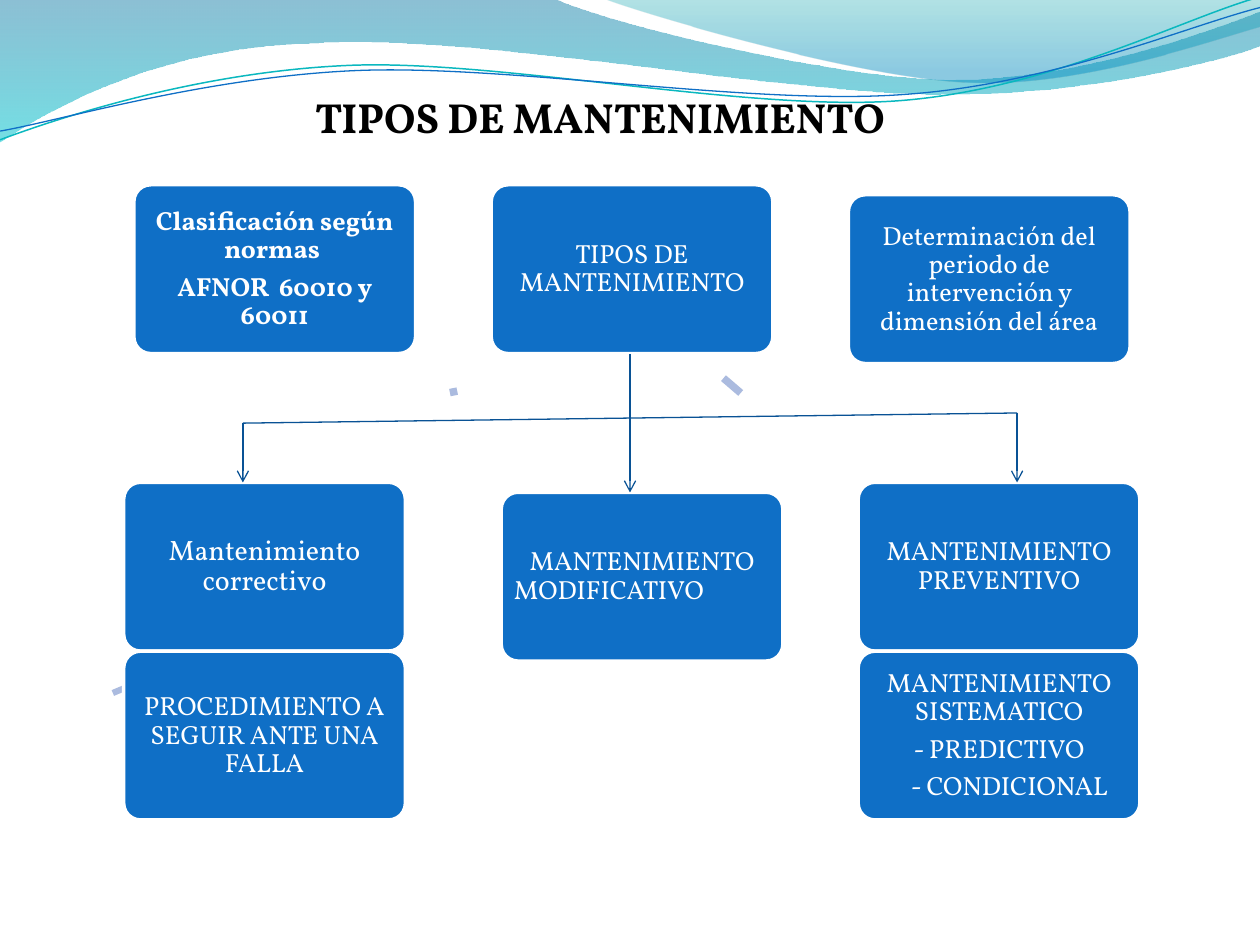
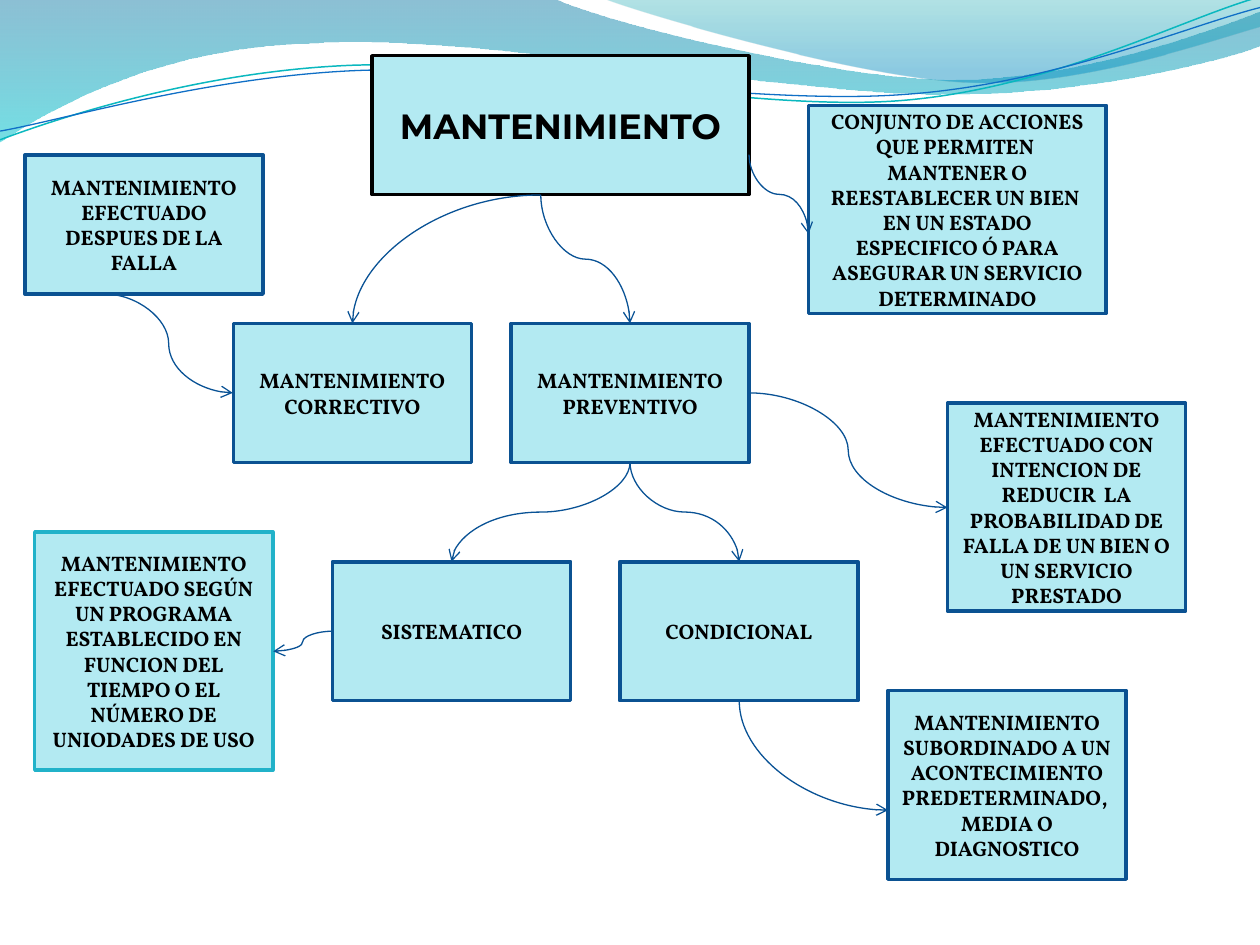
from lxml import etree
from pptx import Presentation
from pptx.dml.color import RGBColor
from pptx.enum.shapes import MSO_CONNECTOR as Link, MSO_SHAPE as Preset
from pptx.enum.text import MSO_ANCHOR as Anchor, MSO_AUTO_SIZE as AutoSize, PP_ALIGN as Align
from pptx.oxml.ns import qn
from pptx.util import Pt

BLACK = RGBColor(0x00, 0x00, 0x00)
WHITE = RGBColor(0xFF, 0xFF, 0xFF)
BLUE = RGBColor(0x0F, 0x6F, 0xC6)
TEAL = RGBColor(0x0A, 0xB8, 0xBF)
ARROW_BLUE = RGBColor(0x09, 0x52, 0x95)
EDGE_BLUE = RGBColor(0x0B, 0x52, 0x92)
EDGE_TEAL = RGBColor(0x21, 0xB2, 0xC9)
PALE_BLUE = RGBColor(0xB3, 0xEA, 0xF2)
SLIVER = RGBColor(0xAB, 0xBB, 0xDF)
FONT, HEADING_FONT = "Vollkorn", "Montserrat"
TITLE_ONLY = 5

# Outlines in points: one point is a straight step, three points are a Bézier step.
LEFT_WAVE = [
    [(0, -0.5)], [(316.8, -0.7)],
    [(342.7, 12.2), (478, 45.4), (545.8, 45.4)],
    [(614.2, 45.4), (689.8, 18.7), (720, 6.5)], [(720.7, 25.9)],
    [(707.8, 31.7), (626.4, 54.7), (537.1, 54)],
    [(447.8, 54), (275, 20.2), (185, 24.5)],
    [(92.9, 25.9), (33.1, 59.8), (-0.7, 81.4)],
]
RIGHT_WAVE = [
    [(344.9, -0.7)],
    [(366.5, 7.9), (491, 44.6), (553.7, 46.8)],
    [(616.3, 49.7), (691.9, 23), (720, 15.1)], [(720, 0)],
]
TEAL_CURVE = [
    [(0, 79.9)],
    [(34.6, 67), (113.8, 41), (199.4, 37.4)],
    [(284.4, 33.8), (427, 64.1), (513.4, 57.6)],
    [(599.8, 51.1), (675.4, 10.8), (718.6, -1.4)],
]
BLUE_CURVE = [
    [(0, 74.9)],
    [(33.8, 69.1), (118.1, 43.9), (203.8, 40.3)],
    [(290.2, 36.7), (429.8, 60.5), (516.2, 54)],
    [(601.9, 48.2), (677.5, 15.1), (720, 4.3)],
]


def draw_outline(page, steps, close):
    """Build a freeform, then join each three-point step into one Bézier segment."""
    start, *rest = [(Pt(x), Pt(y)) for step in steps for x, y in step]
    builder = page.shapes.build_freeform(*start)
    builder.add_line_segments(rest, close=close)
    shape = builder.convert_to_shape()
    shape.shadow.inherit = False
    segments = iter(list(shape.element.iter(qn("a:lnTo"))))
    for step in steps[1:]:
        parts = [next(segments) for _ in step]
        if len(parts) == 3:
            bezier = etree.Element(qn("a:cubicBezTo"))
            parts[0].addprevious(bezier)
            for part in parts:
                bezier.append(part[0])
                part.getparent().remove(part)
    return shape


def draw_wave(page, steps, stops):
    """Fill a wave with a downward gradient of (position, colour, opacity) stops."""
    wave = draw_outline(page, steps, True)
    wave.line.fill.background()
    wave.fill.gradient()
    wave.fill.gradient_angle = 270
    for stop, (position, colour, _) in zip(wave.fill.gradient_stops, stops):
        stop.position = position
        stop.color.rgb = RGBColor.from_string(colour)
    for tint, (_, _, opacity) in zip(wave.element.iter(qn("a:srgbClr")), stops):
        etree.SubElement(tint, qn("a:alpha"), val=str(opacity * 1000))
    return wave


def draw_curve(page, steps, colour, weight):
    curve = draw_outline(page, steps, False)
    curve.fill.background()
    curve.line.color.rgb = colour
    curve.line.width = Pt(weight)
    return curve


def decorate_master(deck, page):
    """Build the wave band on a page and move it to the back of the master."""
    band = [
        draw_wave(page, LEFT_WAVE, [(0, "0074A1", 45), (1, "00C6CF", 55)]),
        draw_wave(page, RIGHT_WAVE, [(0, "00A1A9", 30), (0.8, "008BBF", 45)]),
        draw_curve(page, TEAL_CURVE, TEAL, 0.85),
        draw_curve(page, BLUE_CURVE, BLUE, 0.75),
    ]
    for index, shape in enumerate(band):
        shape.element.nvSpPr.cNvPr.set("id", str(100 + index))
        deck.slide_master.shapes.element.insert(2 + index, shape.element)


def place(shape, box):
    shape.left, shape.top, shape.width, shape.height = (Pt(value) for value in box)


def paint(shape, fill, edge=None):
    shape.shadow.inherit = False
    shape.fill.solid()
    shape.fill.fore_color.rgb = fill
    if edge is None:
        shape.line.fill.background()
    else:
        shape.line.color.rgb = edge
        shape.line.width = Pt(2)


def write(shape, lines, size, colour, bold=True, font=FONT, align=Align.CENTER,
          anchor=Anchor.MIDDLE):
    frame = shape.text_frame
    frame.word_wrap = True
    frame.auto_size = AutoSize.NONE
    frame.vertical_anchor = anchor
    frame.text = "\n".join(lines)
    for para in frame.paragraphs:
        para.alignment = align
        para.font.name = font
        para.font.size = Pt(size)
        para.font.bold = bold
        para.font.color.rgb = colour
    return frame


def add_preset(page, preset, box):
    return page.shapes.add_shape(preset, *(Pt(value) for value in box))


def style_link(link, arrow=True):
    link.line.color.rgb = ARROW_BLUE
    link.line.width = Pt(0.75)
    if arrow:
        line = link.element.spPr.find(qn("a:ln"))
        etree.SubElement(line, qn("a:tailEnd"), type="arrow")
    etree.SubElement(link.element.spPr, qn("a:effectLst"))


def add_straight(page, begin, end, arrow=True):
    link = page.shapes.add_connector(Link.STRAIGHT, *(Pt(v) for v in (*begin, *end)))
    style_link(link, arrow)


def add_curved(page, begin, end, downward=False, bend="curvedConnector3"):
    """Curve from begin to end, leaving sideways or downward."""
    (x1, y1), (x2, y2) = begin, end
    ends = x1, y1, x2, y2
    if downward:
        middle_x, middle_y = (x1 + x2) / 2, (y1 + y2) / 2
        half_length, half_breadth = (y2 - y1) / 2, abs(x2 - x1) / 2
        if x2 > x1:
            half_length = -half_length
        ends = (middle_x - half_length, middle_y - half_breadth,
                middle_x + half_length, middle_y + half_breadth)
    link = page.shapes.add_connector(Link.CURVE, *(Pt(value) for value in ends))
    if downward:
        link.rotation = 270 if x2 > x1 else 90
    link.element.spPr.find(qn("a:prstGeom")).set("prst", bend)
    style_link(link)


def add_card(page, corner, lines, size=15, bold=False):
    """Rounded blue card of the classification chart."""
    card = add_preset(page, Preset.ROUNDED_RECTANGLE, (*corner, 161, 96.5))
    card.adjustments[0] = 0.1
    paint(card, BLUE, WHITE)
    frame = write(card, lines, size, WHITE, bold)
    inset = Pt(size * 0.3)
    frame.margin_left = frame.margin_right = frame.margin_top = frame.margin_bottom = inset
    for para in frame.paragraphs:
        para.line_spacing = 0.9
        para.space_after = Pt(size * 0.35)
        para._p.get_or_add_pPr().set("defTabSz", str(Pt(52.5)))
    return card


def build_types_slide(page):
    title = page.shapes.title
    place(title, (172.8, 48.5, 347, 58))
    write(title, ["TIPOS DE MANTENIMIENTO"], 24, BLACK, align=Align.LEFT,
          anchor=Anchor.TOP).word_wrap = False

    for box, angle in [((64, 391.7, 13, 3.6), 337.2), ((411.8, 218.2, 13, 4.3), 40.6),
                       ((257, 221.8, 4.3, 4.3), 78.6)]:
        sliver = add_preset(page, Preset.RECTANGLE, box)
        sliver.rotation = angle
        paint(sliver, SLIVER)

    top, middle, bottom, drop = 105.6, 275.6, 372.1, 5.7
    add_card(page, (280.7, top), ["TIPOS DE MANTENIMIENTO"])
    add_card(page, (70.7, middle), ["Mantenimiento correctivo"], size=16)
    add_card(page, (70.7, bottom), ["PROCEDIMIENTO A SEGUIR ANTE UNA FALLA"])
    add_card(page, (286.4, middle + drop), ["MANTENIMIENTO MODIFICATIVO\t"])
    add_card(page, (484.8, top + drop), ["Determinación del periodo de intervención y "
                                         "dimensión del área"])
    add_card(page, (76.5, top), ["Clasificación según normas ", "AFNOR  60010 y 60011"],
             bold=True)
    add_card(page, (490.4, middle), ["MANTENIMIENTO PREVENTIVO"])
    kinds = add_card(page, (490.4, bottom), ["MANTENIMIENTO SISTEMATICO", "- PREDICTIVO",
                                             "- CONDICIONAL"])
    last = kinds.text_frame.paragraphs[-1]
    last._p.get_or_add_pPr().set("marL", str(Pt(12)))

    left_end, right_end, stem = (138.8, 241.8), (581.2, 236), 360
    add_straight(page, left_end, right_end, arrow=False)
    add_straight(page, (stem, 202.2), (stem, 241.8), arrow=False)
    for begin, tip in [((stem, 241.8), 281.4), (left_end, 275.7), (right_end, 275.7)]:
        add_straight(page, begin, (begin[0], tip))


def add_step(page, corner, text, size=(136.1, 79.4), edge=EDGE_BLUE):
    """Pale box of the concept map."""
    step = add_preset(page, Preset.FLOWCHART_PROCESS, (*corner, *size))
    paint(step, PALE_BLUE, edge)
    write(step, [text], 12, BLACK)


def build_map_slide(page):
    title = page.shapes.title
    place(title, (212.6, 31.8, 215.4, 79.4))
    paint(title, PALE_BLUE, BLACK)
    write(title, ["MANTENIMIENTO"], 20, BLACK, font=HEADING_FONT)

    add_step(page, (14.2, 88.6), "MANTENIMIENTO EFECTUADO DESPUES DE LA FALLA")
    add_step(page, (462, 60.2), "CONJUNTO DE ACCIONES QUE PERMITEN  MANTENER O REESTABLECER "
             "UN BIEN  EN UN ESTADO ESPECIFICO Ó PARA ASEGURAR UN SERVICIO DETERMINADO",
             (170.1, 119))
    add_step(page, (133.3, 184.9), "MANTENIMIENTO CORRECTIVO")
    add_step(page, (292, 184.9), "MANTENIMIENTO PREVENTIVO")
    add_step(page, (19.8, 304), "MANTENIMIENTO EFECTUADO SEGÚN UN PROGRAMA ESTABLECIDO EN "
             "FUNCION DEL TIEMPO O EL NÚMERO DE UNIODADES DE USO", (136.1, 136.1), EDGE_TEAL)
    add_step(page, (541.4, 230.3), "MANTENIMIENTO EFECTUADO CON INTENCION DE REDUCIR  LA "
             "PROBABILIDAD DE FALLA DE UN BIEN O UN SERVICIO PRESTADO", (136.1, 119))
    add_step(page, (354.2, 321), "CONDICIONAL")
    add_step(page, (507.4, 394.5), "MANTENIMIENTO SUBORDINADO A UN ACONTECIMIENTO "
             "PREDETERMINADO,  MEDIA O DIAGNOSTICO", (136.1, 108))

    below_title, below_preventive = (309, 111.4), (360, 264.3)
    add_curved(page, (59.8, 168), (133, 224.5))
    add_curved(page, below_preventive, (422.4, 321), downward=True)
    add_curved(page, below_preventive, (258, 321), downward=True)
    add_curved(page, below_title, (360, 184.8), downward=True)
    add_curved(page, below_title, (201.4, 184.8), bend="curvedConnector2")
    add_curved(page, (428, 88.4), (462, 133.7), downward=True)
    add_curved(page, (428, 224.5), (541.4, 290))
    add_curved(page, (422.4, 400.4), (507.4, 463), downward=True, bend="curvedConnector2")
    add_curved(page, (190, 360.7), (156.2, 372.2))
    add_step(page, (190, 321), "SISTEMATICO")


def main():
    deck = Presentation()
    deck.slide_width, deck.slide_height = Pt(720), Pt(540)
    layout = deck.slide_layouts[TITLE_ONLY]
    pages = [deck.slides.add_slide(layout) for _ in range(2)]
    decorate_master(deck, pages[0])
    build_types_slide(pages[0])
    build_map_slide(pages[1])
    deck.save("out.pptx")


if __name__ == "__main__":
    main()
